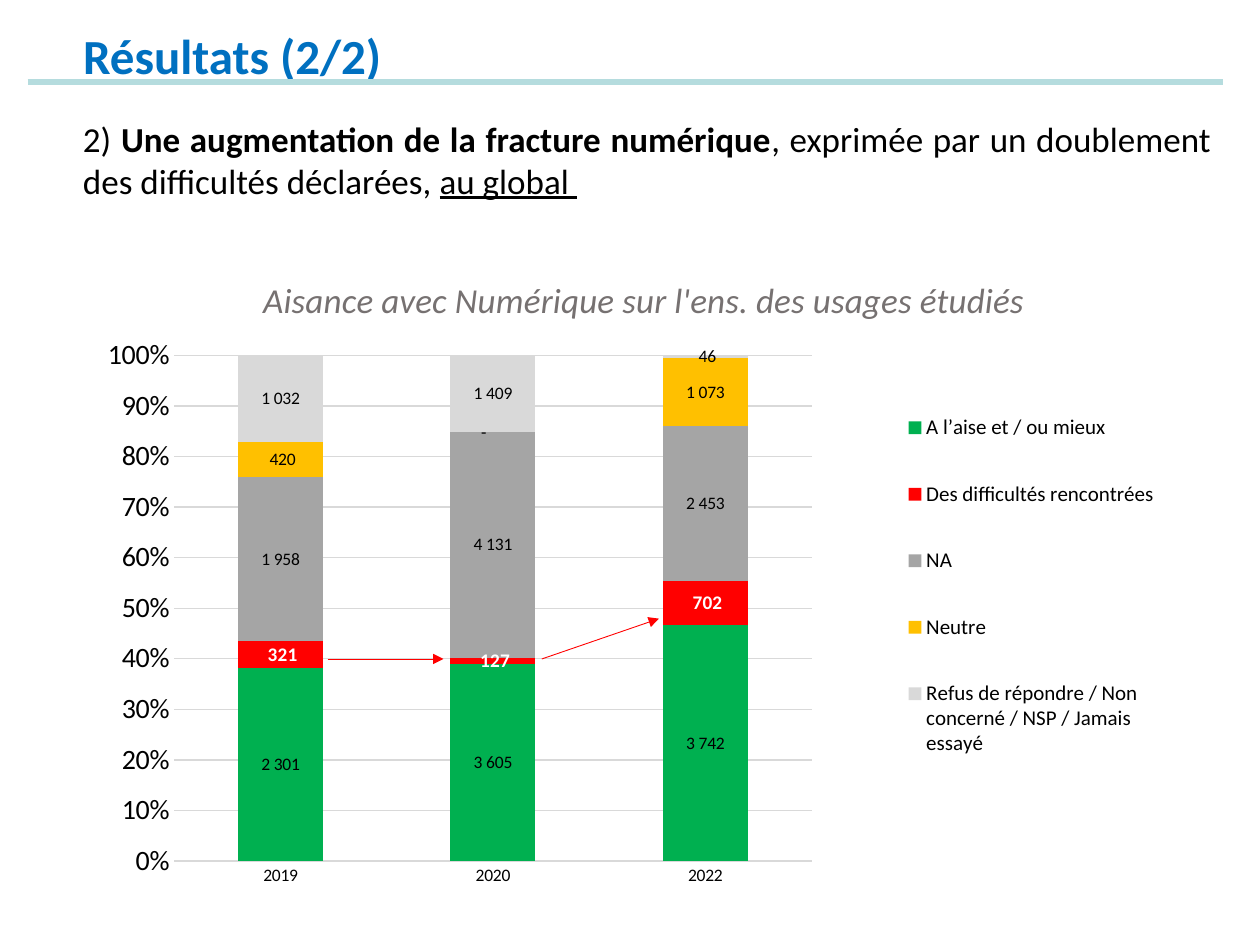
from collections import namedtuple
from lxml.etree import SubElement
from pptx import Presentation
from pptx.chart.data import CategoryChartData
from pptx.dml.color import RGBColor
from pptx.enum.chart import XL_CHART_TYPE as ChartType, XL_LEGEND_POSITION as LegendPosition
from pptx.enum.chart import XL_TICK_MARK as TickMark
from pptx.enum.shapes import MSO_CONNECTOR as Connector
from pptx.enum.text import MSO_ANCHOR as Anchor, PP_ALIGN as Align
from pptx.oxml import parse_xml
from pptx.oxml.ns import nsdecls, qn
from pptx.util import Inches, Pt

Box = namedtuple("Box", "left top width height")
COLUMNS, ROWS = 100, 75
CELL = Inches(0.1)
FONT = "Calibri"
GRID_GREY = "D9D9D9"
NUMBER_FORMAT = '_-* #\\ ##0_-;\\-* #\\ ##0_-;_-* "-"??_-;_-'
YEARS = ("2019", "2020", "2022")
SERIES = (
    ("A l’aise et / ou mieux", (2301, 3605, 3742), "00B050"),
    ("Des difficultés rencontrées", (321, 127, 702), "FF0000"),
    ("NA", (1958, 4131, 2453), "A5A5A5"),
    ("Neutre", (420, 0, 1073), "FFC000"),
    ("Refus de répondre / Non concerné / NSP / Jamais essayé", (1032, 1409, 46), GRID_GREY),
)
HIGHLIGHT = "Des difficultés rencontrées"


def cells(*counts):
    return [round(count * CELL) for count in counts]


def color(hex_value):
    return RGBColor.from_string(hex_value)


def style(font, size, hex_value="000000", bold=False, italic=False, underline=False):
    font.name = FONT
    font.size = Pt(size)
    font.bold = bold
    font.italic = italic
    font.underline = underline
    font.color.rgb = color(hex_value)


def add_text(para, text, **look):
    span = para.add_run()
    span.text = text
    style(span.font, **look)


def add_line(page, start, end, hex_value, width, arrow=False):
    line = page.shapes.add_connector(Connector.STRAIGHT, *cells(*start, *end))
    line.line.color.rgb = color(hex_value)
    line.line.width = Pt(width)
    if arrow:
        SubElement(line.line._get_or_add_ln(), qn("a:tailEnd"), type="triangle")
    SubElement(line._element.spPr, qn("a:effectLst"))


def set_layout(element, index, target=None, **shares):
    for old in element.findall(qn("c:layout")):
        element.remove(old)
    tags = [("layoutTarget", target)] if target else []
    tags += [("xMode", "edge"), ("yMode", "edge"), *shares.items()]
    inner = "".join(f'<c:{tag} val="{value}"/>' for tag, value in tags)
    element.insert(index, parse_xml(
        f'<c:layout {nsdecls("c")}><c:manualLayout>{inner}</c:manualLayout></c:layout>'))


def prepare_frame(frame, anchor=Anchor.TOP):
    frame.word_wrap = True
    frame.vertical_anchor = anchor
    para = frame.paragraphs[0]
    para.alignment = Align.JUSTIFY
    return para


def place_heading(page, box):
    title = page.shapes.title
    title.left, title.top, title.width, title.height = cells(*box)
    para = prepare_frame(title.text_frame)
    add_text(para, "Résultats (2/2)", size=28, hex_value="0070C0", bold=True)
    rule = box.top + 5
    add_line(page, (2.2, rule), (COLUMNS - 2.9, rule), "B5DCDE", 3)


def place_statement(page, box):
    para = prepare_frame(page.shapes.add_textbox(*cells(*box)).text_frame)
    add_text(para, "2) ", size=20)
    add_text(para, "Une augmentation de la fracture numérique", size=20, bold=True)
    add_text(para, ", exprimée par un doublement des difficultés déclarées, ", size=20)
    add_text(para, "au global ", size=20, underline=True)


def format_axes(chart):
    category, value = chart.category_axis, chart.value_axis
    for axis, size in ((category, 10), (value, 16)):
        axis.major_tick_mark = axis.minor_tick_mark = TickMark.NONE
        style(axis.tick_labels.font, size)
    category.format.line.color.rgb = color(GRID_GREY)
    category.format.line.width = Pt(0.75)
    value.format.line.fill.background()
    value.minimum_scale, value.maximum_scale, value.major_unit = 0, 1, 0.1
    value.tick_labels.number_format = "0%"
    value.tick_labels.number_format_is_linked = False
    value.major_gridlines.format.line.color.rgb = color(GRID_GREY)
    value.major_gridlines.format.line.width = Pt(0.75)


def format_series(plot):
    plot.gap_width, plot.overlap, plot.vary_by_categories = 150, 100, False
    for series, (name, _, fill) in zip(plot.series, SERIES):
        series.format.fill.solid()
        series.format.fill.fore_color.rgb = color(fill)
        labels = series.data_labels
        labels.show_value = True
        labels.number_format = NUMBER_FORMAT
        labels.number_format_is_linked = False
        if name == HIGHLIGHT:
            style(labels.font, 11, "FFFFFF", bold=True)
        else:
            style(labels.font, 10)


def place_chart(page, box):
    data = CategoryChartData(number_format=NUMBER_FORMAT)
    data.categories = YEARS
    for name, values, _ in SERIES:
        data.add_series(name, values)
    chart = page.shapes.add_chart(ChartType.COLUMN_STACKED_100, *cells(*box), data).chart
    style(chart.font, 10)
    format_axes(chart)
    format_series(chart.plots[0])
    chart.has_title = True
    add_text(chart.chart_title.text_frame.paragraphs[0],
             "Aisance avec Numérique sur l'ens. des usages étudiés",
             size=20, hex_value="767171", italic=True)
    chart.has_legend = True
    chart.legend.position = LegendPosition.BOTTOM
    chart.legend.include_in_layout = False
    style(chart.legend.font, 12)
    set_layout(chart.chart_title._element, 1, x=0.15, y=0.04)
    set_layout(chart.legend._element, 1, x=0.73, y=0.2, w=0.25, h=0.65)
    set_layout(chart._chartSpace.chart.plotArea, 0, "inner", x=0.075, y=0.172, w=0.58, h=0.775)


def place_trend(page, box):
    level = box.top + 33
    first, second = box.left + 18.7, box.left + 35.7
    add_line(page, (first, level), (first + 9.2, level), "FF0000", 0.5, arrow=True)
    add_line(page, (second, level), (second + 9.3, level - 3.2), "FF0000", 0.5, arrow=True)


def main():
    deck = Presentation()
    deck.slide_width, deck.slide_height = cells(COLUMNS, ROWS)
    page = deck.slides.add_slide(deck.slide_layouts[5])
    chart_box = Box(7.3, 19.3, 87.2, 51.8)
    place_chart(page, chart_box)
    place_heading(page, Box(5.6, 1.5, 87.2, 5.7))
    place_statement(page, Box(5.6, 8.8, 91.5, 30.3))
    place_trend(page, chart_box)
    deck.save("out.pptx")


if __name__ == "__main__":
    main()
